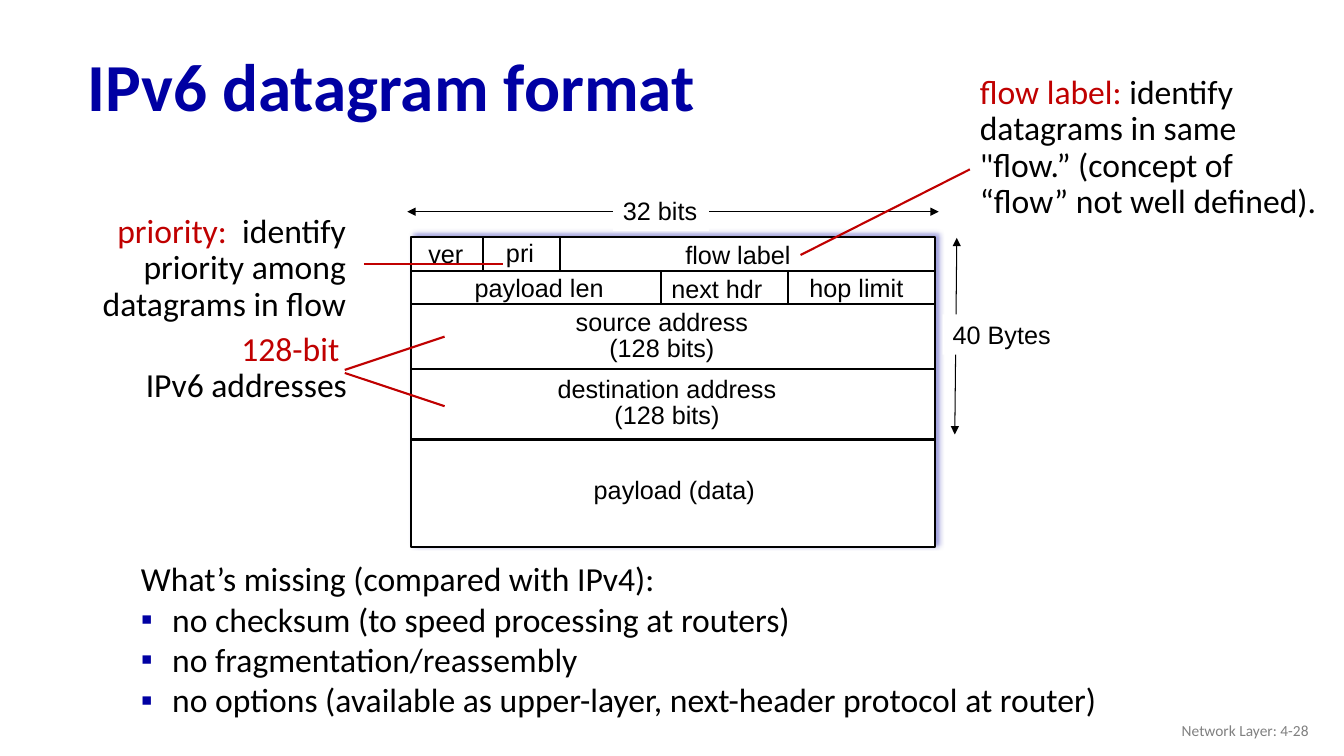
import pptx
import pptx.util
import pptx.dml.color
import pptx.enum.shapes
import pptx.enum.text
import pptx.oxml.ns
import lxml.etree

Inches = pptx.util.Inches
Pt = pptx.util.Pt
ALIGN = pptx.enum.text.PP_ALIGN
ANCHOR = pptx.enum.text.MSO_ANCHOR
FIT = pptx.enum.text.MSO_AUTO_SIZE
RECT = pptx.enum.shapes.MSO_SHAPE.RECTANGLE
STRAIGHT = pptx.enum.shapes.MSO_CONNECTOR.STRAIGHT
BLACK, WHITE, RED, NAVY, GREY = "000000", "FFFFFF", "C00000", "0000A3", "808080"


def color(code):
    return pptx.dml.color.RGBColor.from_string(code)


def node(parent, tag, **attrs):
    return lxml.etree.SubElement(parent, pptx.oxml.ns.qn("a:" + tag), attrs)


def write(para, runs, size, font, align=ALIGN.LEFT, space=1.0, bold=False):
    para.alignment = align
    para.line_spacing = space
    for words, code in runs:
        run = para.add_run()
        run.text = words
        run.font.size = Pt(size)
        run.font.name = font
        run.font.bold = bold
        run.font.color.rgb = color(code)


def add_text(slide, box, paras, size=24, font="Calibri", wrap=True, fill=None, **style):
    shape = slide.shapes.add_textbox(*map(Inches, box))
    if fill:
        shape.fill.solid()
        shape.fill.fore_color.rgb = color(fill)
    frame = shape.text_frame
    frame.word_wrap = wrap
    frame.auto_size = FIT.SHAPE_TO_FIT_TEXT
    for i, runs in enumerate(paras):
        para = frame.add_paragraph() if i else frame.paragraphs[0]
        write(para, runs, size, font, **style)
    return frame


def add_label(slide, box, *lines, **style):
    paras = [[(line, BLACK)] for line in lines]
    add_text(slide, box, paras, 18, "Arial", wrap=False, **style)


def add_line(slide, start, end, code=BLACK, width=1.5, arrows=False):
    line = slide.shapes.add_connector(STRAIGHT, *map(Inches, (*start, *end)))
    line.line.color.rgb = color(code)
    line.line.width = Pt(width)
    if arrows:
        pen = line.line._get_or_add_ln()
        node(pen, "headEnd", type="triangle")
        node(pen, "tailEnd", type="triangle")
    node(line._element.spPr, "effectLst")


def add_title(slide, box):
    title = slide.shapes.title
    title.left, title.top, title.width, title.height = map(Inches, box)
    frame = title.text_frame
    frame.auto_size = FIT.NONE
    frame.vertical_anchor = ANCHOR.MIDDLE
    write(frame.paragraphs[0], [("IPv6 datagram format", NAVY)], 48, "Calibri",
          space=0.9, bold=True)


def add_header(slide, box):
    left, top, width, height = box
    frame = slide.shapes.add_shape(RECT, *map(Inches, box))
    frame.shadow.inherit = False
    frame.fill.solid()
    frame.fill.fore_color.rgb = color(WHITE)
    frame.line.color.rgb = color(BLACK)
    frame.line.width = Pt(1.5)
    glow = node(frame._element.spPr.find(pptx.oxml.ns.qn("a:effectLst")), "outerShdw",
                blurRad=str(Pt(4)), dist=str(Pt(3)), dir=str(315 * 60000),
                algn="ctr", rotWithShape="0")
    node(node(glow, "srgbClr", val=NAVY), "alpha", val="40000")

    rows = [0, 0.34, 0.67, 1.31, 2.01]
    for y in rows[1:]:
        add_line(slide, (left, top + y), (left + width, top + y))
    for x, row in [(0.71, 0), (1.47, 0), (2.48, 1), (3.74, 1)]:
        add_line(slide, (left + x, top + rows[row]), (left + x, top + rows[row + 1]))

    fields = [("ver", 0.07, -0.03, 0.55), ("pri", 0.84, -0.04, 0.48),
              ("flow label", 2.62, -0.02, 1.24), ("payload len", 0.53, 0.3, 1.48),
              ("next hdr", 2.48, 0.31, 1.1), ("hop limit", 3.85, 0.3, 1.13),
              ("payload (data)", 1.71, 2.31, 1.81)]
    for name, x, y, wide in fields:
        add_label(slide, (left + x, top + y, wide, 0.4), name)
    for name, x, y, wide in [("source address", 1.53, 0.69, 1.91),
                             ("destination address", 1.35, 1.35, 2.37)]:
        add_label(slide, (left + x, top + y, wide, 0.61), name, "(128 bits)",
                  align=ALIGN.CENTER, space=0.85)


def add_sizes(slide, box):
    left, top, width, height = box
    spans = [((-0.04, -0.25), (5.23, -0.25), "32 bits", (2, -0.46, 0.95)),
             ((5.41, 0.01), (5.39, 1.96), "40 Bytes", (5.27, 0.77, 1.18))]
    for start, end, name, (x, y, wide) in spans:
        add_line(slide, (left + start[0], top + start[1]), (left + end[0], top + end[1]),
                 width=0.75, arrows=True)
        add_label(slide, (left + x, top + y, wide, 0.4), name, fill=WHITE)


def add_note(slide, box, paras, lines, align=ALIGN.LEFT):
    left, top = box[:2]
    add_text(slide, box, paras, align=align, space=0.9)
    for x1, y1, x2, y2 in lines:
        add_line(slide, (left + x1, top + y1), (left + x2, top + y2), RED)


def add_missing(slide, box):
    items = ["What’s missing (compared with IPv4):",
             "no checksum (to speed processing at routers)",
             "no fragmentation/reassembly",
             "no options (available as upper-layer, next-header protocol at router)"]
    frame = add_text(slide, box, [[(item, BLACK)] for item in items])
    for para in frame.paragraphs[1:]:
        props = para._p.get_or_add_pPr()
        props.set("marL", str(Inches(0.31)))
        props.set("indent", str(-Inches(0.31)))
        node(node(props, "buClr"), "srgbClr", val=NAVY)
        node(props, "buFont", typeface="Arial")
        node(props, "buChar", char="▪")


def add_footer(slide, box):
    frame = add_text(slide, box, [[("Network Layer: 4-28", GREY)]], 11, align=ALIGN.RIGHT)
    frame.auto_size = FIT.NONE
    frame.vertical_anchor = ANCHOR.MIDDLE


def main():
    deck = pptx.Presentation()
    deck.slide_width, deck.slide_height = Inches(13.33), Inches(7.5)
    slide = deck.slides.add_slide(deck.slide_layouts[5])
    packet = (4.08, 2.35, 5.19, 3.08)
    add_title(slide, (0.77, 0.31, 11.5, 1.17))
    add_header(slide, packet)
    add_sizes(slide, packet)
    add_note(slide, (0.17, 2.08, 3.36, 1.19),
             [[("priority:  ", RED), ("identify priority among datagrams in flow", BLACK)]],
             [(3.44, 0.54, 4.82, 0.54)], ALIGN.RIGHT)
    add_note(slide, (9.62, 0.7, 3.54, 1.56),
             [[("flow label: ", RED),
               ("identify datagrams in same \"flow.” (concept of “flow” not well defined).",
                BLACK)]],
             [(-1.68, 1.83, 0, 0.98)])
    add_note(slide, (0, 3.25, 3.54, 0.83),
             [[("128-bit ", RED)], [("IPv6 addresses", BLACK)]],
             [(3.42, 0.45, 4.41, 0.78), (3.42, 0.42, 4.41, 0.09)], ALIGN.RIGHT)
    add_missing(slide, (1.3, 5.49, 9.81, 1.72))
    add_footer(slide, (10.08, 7.05, 3, 0.4))
    deck.save("out.pptx")


if __name__ == "__main__":
    main()
